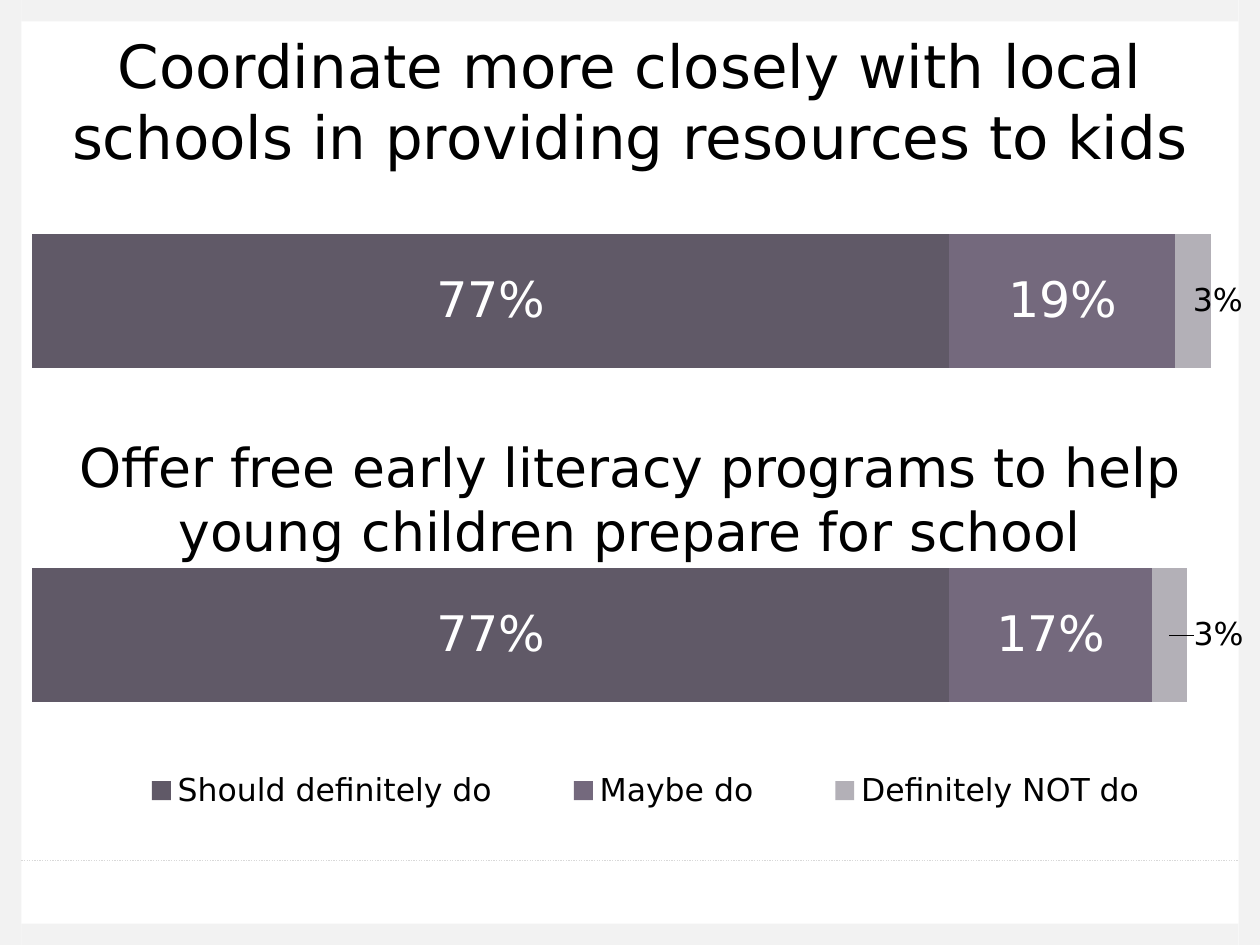
from lxml import etree
from pptx import Presentation
from pptx.chart.data import CategoryChartData
from pptx.dml.color import RGBColor
from pptx.enum.chart import XL_CHART_TYPE, XL_LEGEND_POSITION
from pptx.enum.dml import MSO_LINE
from pptx.enum.shapes import MSO_CONNECTOR, MSO_SHAPE
from pptx.enum.text import MSO_ANCHOR, MSO_AUTO_SIZE, PP_ALIGN
from pptx.oxml import parse_xml
from pptx.oxml.ns import nsdecls, qn
from pptx.util import Inches, Pt

BAR_STACKED = XL_CHART_TYPE.BAR_STACKED
LEGEND_BOTTOM = XL_LEGEND_POSITION.BOTTOM
DOTTED = MSO_LINE.ROUND_DOT
STRAIGHT = MSO_CONNECTOR.STRAIGHT
RECTANGLE = MSO_SHAPE.RECTANGLE
MIDDLE = MSO_ANCHOR.MIDDLE
NO_AUTOFIT = MSO_AUTO_SIZE.NONE
CENTER = PP_ALIGN.CENTER

FONT = "DejaVu Sans"
BLACK = "000000"
WHITE = "FFFFFF"
BORDER = 0.17
ANSWERS = [
    ("Should definitely do", (0.77, 0.77), "605967"),
    ("Maybe do", (0.17, 0.19), "74697D"),
    ("Definitely NOT do", (0.03, 0.03), "B3B0B7"),
]
SMALL_LABEL_SHIFTS = (0.04, 0.02)


def color(value):
    return RGBColor.from_string(value)


def style_font(font, size, value):
    font.name = FONT
    font.size = Pt(size)
    font.bold = False
    font.color.rgb = color(value)


def write_question(box, text, size):
    frame = box.text_frame
    frame.word_wrap = True
    frame.auto_size = NO_AUTOFIT
    frame.vertical_anchor = MIDDLE
    frame.text = text
    paragraph = frame.paragraphs[0]
    paragraph.alignment = CENTER
    style_font(paragraph.font, size, BLACK)


def add_border(slide, left, top, width, height):
    border = slide.shapes.add_shape(
        RECTANGLE, Inches(left), Inches(top), Inches(width), Inches(height))
    border.shadow.inherit = False
    border.fill.solid()
    border.fill.fore_color.rgb = color("F2F2F2")
    border.line.fill.background()


def add_footer_rule(slide):
    rule = slide.shapes.add_connector(
        STRAIGHT, Inches(BORDER), Inches(6.83), Inches(10 - BORDER), Inches(6.83))
    rule.line.color.rgb = color("D9D9D9")
    rule.line.width = Pt(0.75)
    rule.line.dash_style = DOTTED
    etree.SubElement(rule.element.spPr, qn("a:effectLst"))


def manual_layout(target=None, **fractions):
    parts = [("layoutTarget", target)] if target else []
    if target or "w" in fractions:
        parts += [("xMode", "edge"), ("yMode", "edge")]
    parts += fractions.items()
    layout = etree.Element(qn("c:layout"))
    manual = etree.SubElement(layout, qn("c:manualLayout"))
    for tag, value in parts:
        etree.SubElement(manual, qn("c:" + tag)).set("val", str(value))
    return layout


def place(element, layout, predecessor=None):
    for existing in element.findall(qn("c:layout")):
        element.remove(existing)
    if predecessor is None:
        element.insert(0, layout)
    else:
        element.find(qn(predecessor)).addnext(layout)


def add_answer_chart(slide):
    data = CategoryChartData(number_format="0%")
    data.categories = ["1", "2"]
    for name, shares, _ in ANSWERS:
        data.add_series(name, shares)
    chart = slide.shapes.add_chart(
        BAR_STACKED, Inches(0.25), Inches(1), Inches(9.75), Inches(6.17), data).chart
    style_font(chart.font, 18, BLACK)
    chart.has_title = False
    chart.element.find(qn("c:chart")).addnext(
        parse_xml(f"<c:spPr {nsdecls('c', 'a')}><a:noFill/><a:ln><a:noFill/></a:ln></c:spPr>"))

    chart.value_axis.minimum_scale = 0
    chart.value_axis.maximum_scale = 1
    chart.value_axis.has_major_gridlines = False
    chart.value_axis.visible = False
    chart.category_axis.visible = False

    chart.has_legend = True
    chart.legend.position = LEGEND_BOTTOM
    chart.legend.include_in_layout = False
    style_font(chart.legend.font, 18, BLACK)
    place(chart.legend._element, manual_layout(x=0.04, y=0.81, w=0.92, h=0.09), "c:legendPos")

    plot = chart.plots[0]
    plot.gap_width = 150
    plot.overlap = 100
    plot.vary_by_categories = False
    place(chart.element.find(".//" + qn("c:plotArea")),
          manual_layout("inner", x=0, y=0.01, w=0.97, h=0.86))

    for series, (_, _, fill) in zip(plot.series, ANSWERS):
        series.format.fill.solid()
        series.format.fill.fore_color.rgb = color(fill)
        labels = series.data_labels
        labels.show_value = True
        labels.number_format = "0%"
        labels.number_format_is_linked = False
        style_font(labels.font, 28, WHITE)

    smallest = plot.series[-1]
    style_font(smallest.data_labels.font, 18, BLACK)
    for index, shift in enumerate(SMALL_LABEL_SHIFTS):
        style_font(smallest.points[index].data_label.font, 18, BLACK)
    for label, shift in zip(smallest.data_labels._element.findall(qn("c:dLbl")),
                            SMALL_LABEL_SHIFTS):
        place(label, manual_layout(x=shift, y=0), "c:idx")


def main():
    deck = Presentation()
    deck.slide_width = Inches(10)
    deck.slide_height = Inches(7.5)
    slide = deck.slides.add_slide(deck.slide_layouts[5])

    for left in (0, 10 - BORDER):
        add_border(slide, left, 0, BORDER, 7.5)
    for top in (0, 7.5 - BORDER):
        add_border(slide, BORDER, top, 10 - 2 * BORDER, BORDER)
    add_footer_rule(slide)

    title = slide.shapes.title
    title.left, title.top = Inches(0), Inches(BORDER)
    title.width, title.height = Inches(10), Inches(1.25)
    write_question(
        title, "Coordinate more closely with local schools in providing resources to kids", 34)
    literacy = slide.shapes.add_textbox(Inches(0.5), Inches(3.33), Inches(9), Inches(1.25))
    write_question(
        literacy, "Offer free early literacy programs to help young children prepare for school", 30.6)
    add_answer_chart(slide)
    deck.save("out.pptx")


if __name__ == "__main__":
    main()
